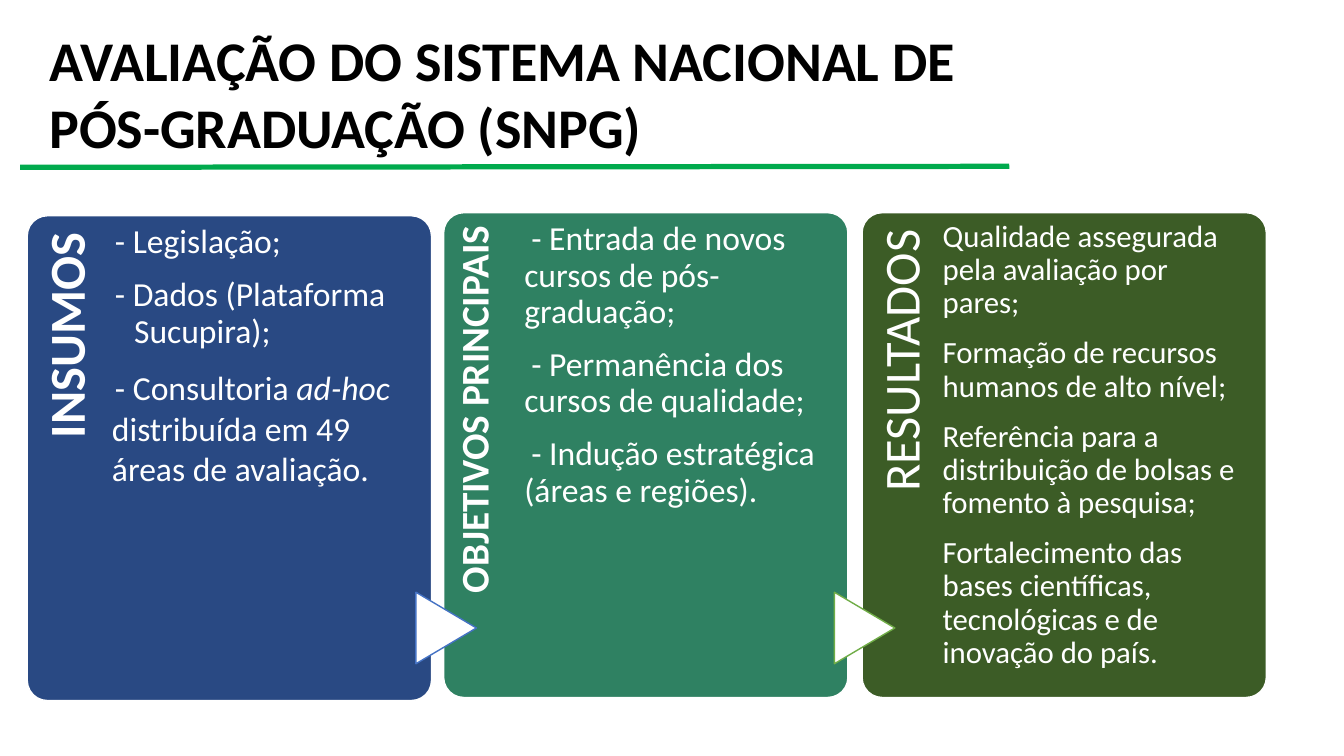
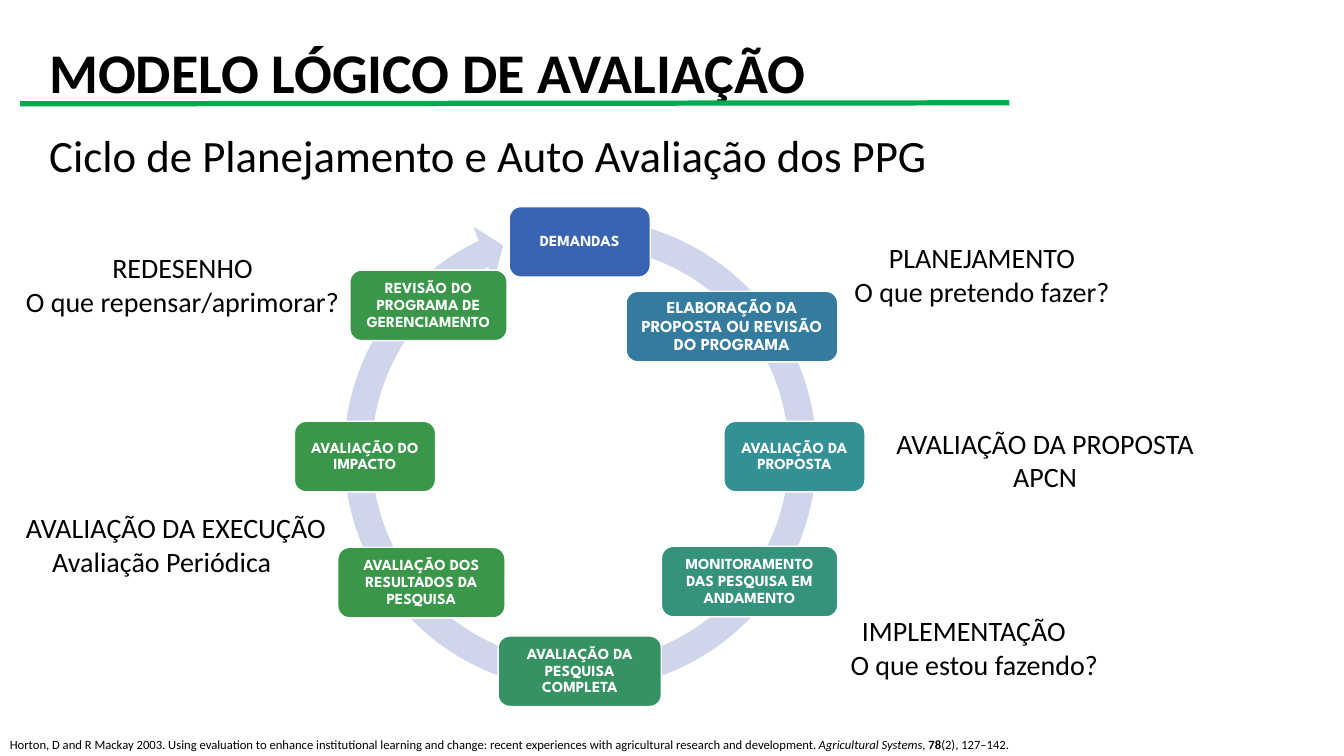
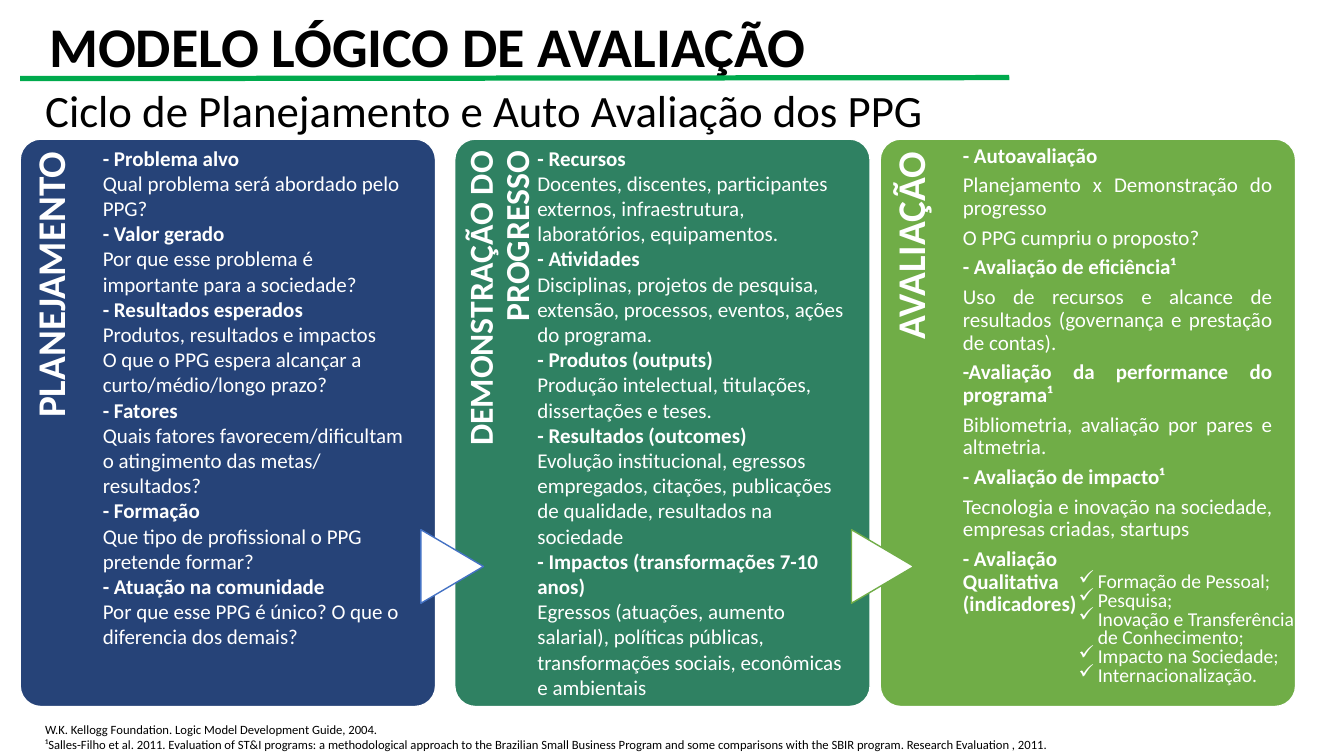
from dataclasses import dataclass

from lxml.etree import SubElement
from pptx import Presentation
from pptx.dml.color import RGBColor
from pptx.enum.shapes import MSO_CONNECTOR, MSO_SHAPE
from pptx.enum.text import MSO_ANCHOR, MSO_AUTO_SIZE, PP_ALIGN
from pptx.oxml.ns import qn
from pptx.util import Emu, Pt

EMU_PER_PX = 9144
BLACK, WHITE = "000000", "FFFFFF"
RULE_GREEN, TEAL, LEAF, BLUE = "00AA4D", "2F8162", "70AD47", "4472C4"
LEFT, CENTER, RIGHT, JUSTIFY = (
    PP_ALIGN.LEFT, PP_ALIGN.CENTER, PP_ALIGN.RIGHT, PP_ALIGN.JUSTIFY)
CYCLE_SUBTITLE = "Ciclo de Planejamento e Auto Avaliação dos PPG"


def px(length):
    return Emu(round(length * EMU_PER_PX))


def rgb(hex_color):
    return RGBColor.from_string(hex_color)


@dataclass(frozen=True)
class Para:
    text: str = ""
    runs: tuple = ()
    bold: bool = False
    align: PP_ALIGN = LEFT
    spacing: float = 1.0
    after: int = 0
    margin: int = 0
    indent: int = 0
    bullet: str = ""


@dataclass(frozen=True)
class Panel:
    left: int
    top: int
    width: int
    height: int


class Deck:
    font = "Calibri"
    node_font = "League Spartan"

    def __init__(self):
        self.presentation = Presentation()
        self.presentation.slide_width = px(1333)
        self.presentation.slide_height = px(750)
        self.slide = None

    def new_slide(self):
        self.slide = self.presentation.slides.add_slide(
            self.presentation.slide_layouts[6])

    def fill_frame(self, frame, paragraphs, size, color, font=None):
        frame.word_wrap = True
        for position, para in enumerate(paragraphs):
            line = frame.paragraphs[0] if position == 0 else frame.add_paragraph()
            line.alignment = para.align
            line.line_spacing = para.spacing
            line.space_after = Pt(para.after)
            properties = line._p.get_or_add_pPr()
            properties.set("marL", str(px(para.margin)))
            properties.set("indent", str(px(para.indent)))
            if para.bullet:
                SubElement(properties, qn("a:buChar")).set("char", para.bullet)
            line.font.name = font or self.font
            line.font.size = Pt(size)
            line.font.bold = para.bold
            line.font.color.rgb = rgb(color)
            for text, style in para.runs or ((para.text, ""),):
                run = line.add_run()
                run.text = text
                if style == "italic":
                    run.font.italic = True
                if style == "bold":
                    run.font.bold = True

    def text(self, left, top, width, height, paragraphs, size,
             color=BLACK, insets=None, rotation=0):
        box = self.slide.shapes.add_textbox(
            px(left), px(top), px(width), px(height))
        box.rotation = rotation
        frame = box.text_frame
        if insets:
            (frame.margin_left, frame.margin_top,
             frame.margin_right, frame.margin_bottom) = map(px, insets)
        else:
            frame.auto_size = MSO_AUTO_SIZE.SHAPE_TO_FIT_TEXT
        self.fill_frame(frame, paragraphs, size, color)

    def shape(self, preset, left, top, width, height, fill, line=WHITE,
              adjustments=()):
        shape = self.slide.shapes.add_shape(
            preset, px(left), px(top), px(width), px(height))
        shape.shadow.inherit = False
        shape.fill.solid()
        shape.fill.fore_color.rgb = rgb(fill)
        if line:
            shape.line.color.rgb = rgb(line)
            shape.line.width = Pt(1)
        else:
            shape.line.fill.background()
        for position, value in enumerate(adjustments):
            shape.adjustments[position] = value
        return shape

    def title(self, text, top, width, height, rule_top):
        self.text(39, top, width, height, [Para(text, bold=True)], 40)
        rule = self.slide.shapes.add_connector(
            MSO_CONNECTOR.STRAIGHT,
            px(20), px(rule_top + 1), px(1001), px(rule_top))
        rule.line.color.rgb = rgb(RULE_GREEN)
        rule.line.width = Pt(3.75)
        SubElement(rule._element.spPr, qn("a:effectLst"))

    def subtitle(self, text, left, top):
        self.text(left, top, 1294, 64, [Para(text)], 32)

    def panel(self, panel, fill, label, label_size, paragraphs, size,
              label_bold=True):
        self.shape(MSO_SHAPE.ROUNDED_RECTANGLE, panel.left, panel.top,
                   panel.width, panel.height, fill, adjustments=(0.05,))
        strip = round(panel.width * 0.2)
        length = round(panel.height * 0.82)
        self.text(panel.left + (strip - length) / 2,
                  panel.top + (length - strip) / 2, length, strip,
                  [Para(label, bold=label_bold, align=RIGHT, spacing=0.9)],
                  label_size, WHITE,
                  (0, round(label_size * 0.38), round(label_size * 0.48), 0), 270)
        self.text(panel.left + strip, panel.top, round(panel.width * 0.745),
                  panel.height, paragraphs, size, WHITE,
                  (0, round(size * 0.38), 0, 0))

    def arrow(self, left, top, width, height, line):
        self.shape(MSO_SHAPE.FLOWCHART_EXTRACT, left, top, width, height,
                   WHITE, line).rotation = 90

    def node(self, left, top, width, fill, text, size=11):
        node = self.shape(MSO_SHAPE.ROUNDED_RECTANGLE, left, top, width, 70, fill)
        frame = node.text_frame
        frame.margin_left = frame.margin_right = px(8)
        frame.margin_top = frame.margin_bottom = px(8)
        frame.vertical_anchor = MSO_ANCHOR.MIDDLE
        self.fill_frame(frame, [Para(text, bold=True, align=CENTER, spacing=0.9)],
                        size, WHITE, self.node_font)


def system_slide(deck):
    deck.new_slide()
    deck.title("AVALIAÇÃO DO SISTEMA NACIONAL DE PÓS-GRADUAÇÃO (SNPG)",
               20, 942, 145, 165)
    inputs = [
        Para("- Legislação;", spacing=0.9, after=12, margin=4, indent=3),
        Para("- Dados (Plataforma Sucupira);", spacing=0.9, after=12,
             margin=26, indent=-19),
        Para(runs=(("- Consultoria ", ""), ("ad-hoc", "italic"),
                   (" distribuída em 49 áreas de avaliação.", "")),
             after=12, margin=4, indent=3),
    ]
    goals = [Para(goal, spacing=0.9, after=12, indent=7) for goal in (
        "- Entrada de novos cursos de pós-graduação;",
        "- Permanência dos cursos de qualidade;",
        "- Indução estratégica (áreas e regiões).")]
    results = [Para(result, spacing=0.9, after=12) for result in (
        "Qualidade assegurada pela avaliação por pares;",
        "Formação de recursos humanos de alto nível;",
        "Referência para a distribuição de bolsas e fomento à pesquisa;",
        "Fortalecimento das bases científicas, tecnológicas e de inovação do país.")]
    deck.panel(Panel(27, 214, 401, 481), "294983", "INSUMOS", 36, inputs, 24)
    deck.panel(Panel(440, 211, 401, 481), TEAL, "OBJETIVOS PRINCIPAIS", 28,
               goals, 24)
    deck.panel(Panel(855, 211, 401, 481), "3C5C26", "RESULTADOS", 36,
               results, 22, label_bold=False)
    for left, line in ((407, BLUE), (822, LEAF)):
        deck.arrow(left, 593, 71, 60, line)


def cycle_slide(deck):
    deck.new_slide()
    deck.title("MODELO LÓGICO DE AVALIAÇÃO", 32, 879, 77, 102)
    deck.subtitle(CYCLE_SUBTITLE, 39, 122)
    deck.shape(MSO_SHAPE.CIRCULAR_ARROW, 326, 201, 499, 499, "CFD5EA", None,
               (0.055, 3.307, 146.528, 168.722, 0.058))
    final_green = "3A9649"
    for step in (
        (505, 205, 140, "3864B2", "DEMANDAS"),
        (621, 289, 210, "347B9E",
         "ELABORAÇÃO DA PROPOSTA OU REVISÃO DO PROGRAMA", 12),
        (718, 418, 140, "339095", "AVALIAÇÃO DA PROPOSTA"),
        (656, 542, 175, "35937D", "MONITORAMENTO DAS PESQUISA EM ANDAMENTO"),
        (494, 631, 162, "369262", "AVALIAÇÃO DA PESQUISA COMPLETA"),
        (335, 543, 166, final_green, "AVALIAÇÃO DOS RESULTADOS DA PESQUISA"),
        (292, 418, 140, final_green, "AVALIAÇÃO DO IMPACTO"),
        (347, 268, 156, final_green, "REVISÃO DO PROGRAMA DE GERENCIAMENTO"),
    ):
        deck.node(*step)
    for left, top, width, phase, phase_align, question, question_align in (
        (831, 234, 286, "PLANEJAMENTO", CENTER, "O que pretendo fazer?", CENTER),
        (877, 418, 319, "AVALIAÇÃO DA PROPOSTA", CENTER, "APCN", CENTER),
        (813, 604, 286, "IMPLEMENTAÇÃO", CENTER, "O que estou fazendo?", RIGHT),
        (15, 244, 332, "REDESENHO", CENTER, "O que repensar/aprimorar?", CENTER),
        (-12, 502, 345, "AVALIAÇÃO DA EXECUÇÃO", RIGHT,
         "Avaliação Periódica", CENTER),
    ):
        deck.text(left, top, width, 77,
                  [Para(phase, align=phase_align),
                   Para(question, align=question_align)], 20)
    citation = (
        ("Horton, D and R Mackay 2003. Using evaluation to enhance institutional "
         "learning and change: recent experiences with agricultural research and "
         "development. ", ""),
        ("Agricultural Systems", "italic"), (", ", ""), ("78", "bold"),
        ("(2), 127–142.", ""))
    deck.text(0, 726, 1040, 25, [Para(runs=citation, align=JUSTIFY)], 9)


def headed(lines, **style):
    return [Para(line, bold=line.startswith("-"), **style) for line in lines]


def model_slide(deck):
    deck.new_slide()
    planning = headed((
        "- Problema alvo",
        "Qual problema será abordado pelo PPG?",
        "- Valor gerado",
        "Por que esse problema é importante para a sociedade?",
        "- Resultados esperados",
        "Produtos, resultados e impactos",
        "O que o PPG espera alcançar a curto/médio/longo prazo?",
        "- Fatores",
        "Quais fatores favorecem/dificultam o atingimento das metas/ resultados?",
        "- Formação",
        "Que tipo de profissional o PPG pretende formar?",
        "- Atuação na comunidade",
        "Por que esse PPG é único? O que o diferencia dos demais?"))
    progress = headed((
        "- Recursos",
        "Docentes, discentes, participantes externos, infraestrutura, "
        "laboratórios, equipamentos.",
        "- Atividades",
        "Disciplinas, projetos de pesquisa, extensão, processos, eventos, "
        "ações do programa.",
        "- Produtos (outputs)",
        "Produção intelectual, titulações, dissertações e teses.",
        "- Resultados (outcomes)",
        "Evolução institucional, egressos empregados, citações, publicações "
        "de qualidade, resultados na sociedade",
        "- Impactos (transformações 7-10 anos)",
        "Egressos (atuações, aumento salarial), políticas públicas, "
        "transformações sociais, econômicas e ambientais"))
    evaluation = headed((
        "- Autoavaliação",
        "Planejamento x Demonstração do progresso",
        "O PPG cumpriu o proposto?",
        "- Avaliação de eficiência¹",
        "Uso de recursos e alcance de resultados (governança e prestação de contas).",
        "-Avaliação da performance do programa¹",
        "Bibliometria, avaliação por pares e altmetria.",
        "- Avaliação de impacto¹",
        "Tecnologia e inovação na sociedade, empresas criadas, startups",
    ), align=JUSTIFY, spacing=0.9, after=5)
    evaluation += [Para(line, bold=True, align=JUSTIFY, spacing=0.9)
                   for line in ("- Avaliação", "Qualitativa", "(indicadores)")]
    for left, fill, label, label_size, paragraphs in (
        (20, "264378", "PLANEJAMENTO", 28, planning),
        (451, TEAL, "DEMONSTRAÇÃO DO PROGRESSO", 24, progress),
        (873, LEAF, "AVALIAÇÃO", 28, evaluation),
    ):
        deck.panel(Panel(left, 138, 412, 563), fill, label, label_size,
                   paragraphs, 15)
    for left, line in ((412, BLUE), (839, LEAF)):
        deck.arrow(left, 531, 73, 62, line)
    deck.title("MODELO LÓGICO DE AVALIAÇÃO", 7, 879, 77, 77)
    deck.subtitle(CYCLE_SUBTITLE, 35, 77)
    deck.text(35, 711, 1030, 39, [
        Para("W.K. Kellogg Foundation. Logic Model Development Guide, 2004."),
        Para("¹Salles-Filho et al. 2011. Evaluation of ST&I programs: a "
             "methodological approach to the Brazilian Small Business Program and "
             "some comparisons with the SBIR program. Research Evaluation , 2011."),
    ], 9)
    deck.text(1059, 564, 236, 123, [
        Para(indicator, spacing=0.8, margin=20, indent=-19, bullet="✓")
        for indicator in (
            "Formação de Pessoal;", "Pesquisa;",
            "Inovação e Transferência de Conhecimento;",
            "Impacto na Sociedade;", "Internacionalização.")], 14, WHITE)


def main():
    deck = Deck()
    system_slide(deck)
    cycle_slide(deck)
    model_slide(deck)
    deck.presentation.save("out.pptx")


if __name__ == "__main__":
    main()
